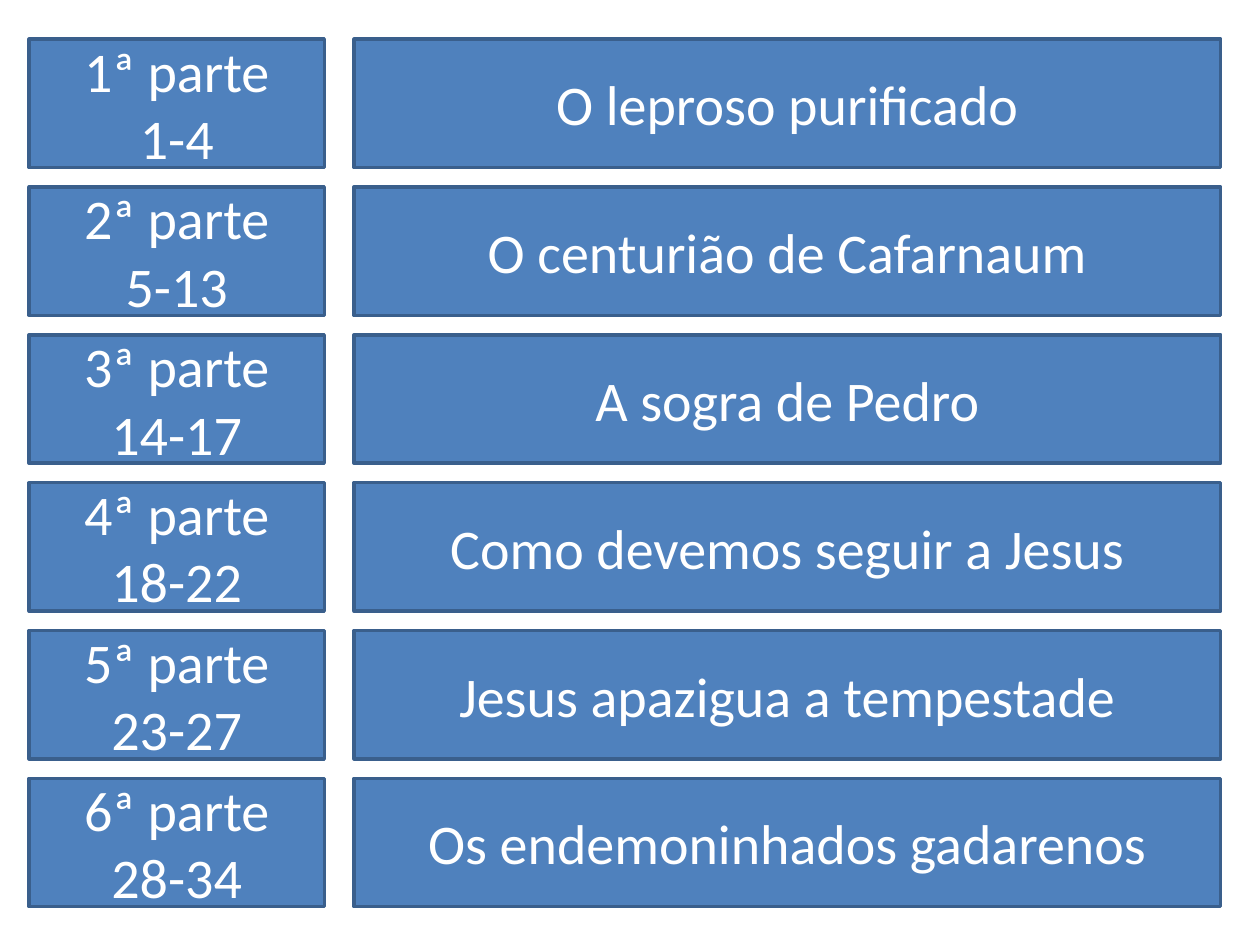
"""Build a slide listing six numbered parts with their verses and titles."""
from pptx import Presentation
from pptx.dml.color import RGBColor
from pptx.enum.shapes import MSO_SHAPE as Shape
from pptx.enum.text import MSO_ANCHOR as Anchor, PP_ALIGN as Align
from pptx.util import Cm, Pt

BLUE = RGBColor(0x4F, 0x81, 0xBD)
DARK_BLUE = RGBColor(0x3A, 0x5F, 0x8C)
WHITE = RGBColor(0xFF, 0xFF, 0xFF)

TOP, ROW_STEP, ROW_HEIGHT = 0.79, 2.98, 2.59
PART_LEFT, PART_WIDTH = 0.59, 5.95
TITLE_LEFT, TITLE_WIDTH = 7.14, 17.47

PARTS = [
    ("1-4", "O leproso purificado"),
    ("5-13", "O centurião de Cafarnaum"),
    ("14-17", "A sogra de Pedro"),
    ("18-22", "Como devemos seguir a Jesus"),
    ("23-27", "Jesus apazigua a tempestade"),
    ("28-34", "Os endemoninhados gadarenos"),
]

deck = Presentation()
deck.slide_width, deck.slide_height = Cm(25.4), Cm(19.05)
page = deck.slides.add_slide(deck.slide_layouts[6])


def add_box(left, top, width, lines):
    box = page.shapes.add_shape(
        Shape.RECTANGLE, Cm(left), Cm(top), Cm(width), Cm(ROW_HEIGHT)
    )
    box.shadow.inherit = False
    box.fill.solid()
    box.fill.fore_color.rgb = BLUE
    box.line.color.rgb = DARK_BLUE
    box.line.width = Pt(2)
    frame = box.text_frame
    frame.word_wrap = True
    frame.vertical_anchor = Anchor.MIDDLE
    for index, line in enumerate(lines):
        para = frame.add_paragraph() if index else frame.paragraphs[0]
        para.alignment = Align.CENTER
        span = para.add_run()
        span.text = line
        span.font.name = "Calibri"
        span.font.size = Pt(32)
        span.font.color.rgb = WHITE


for row, (verses, title) in enumerate(PARTS):
    row_top = TOP + row * ROW_STEP
    add_box(PART_LEFT, row_top, PART_WIDTH, [f"{row + 1}ª parte", verses])
    add_box(TITLE_LEFT, row_top, TITLE_WIDTH, [title])

deck.save("out.pptx")
